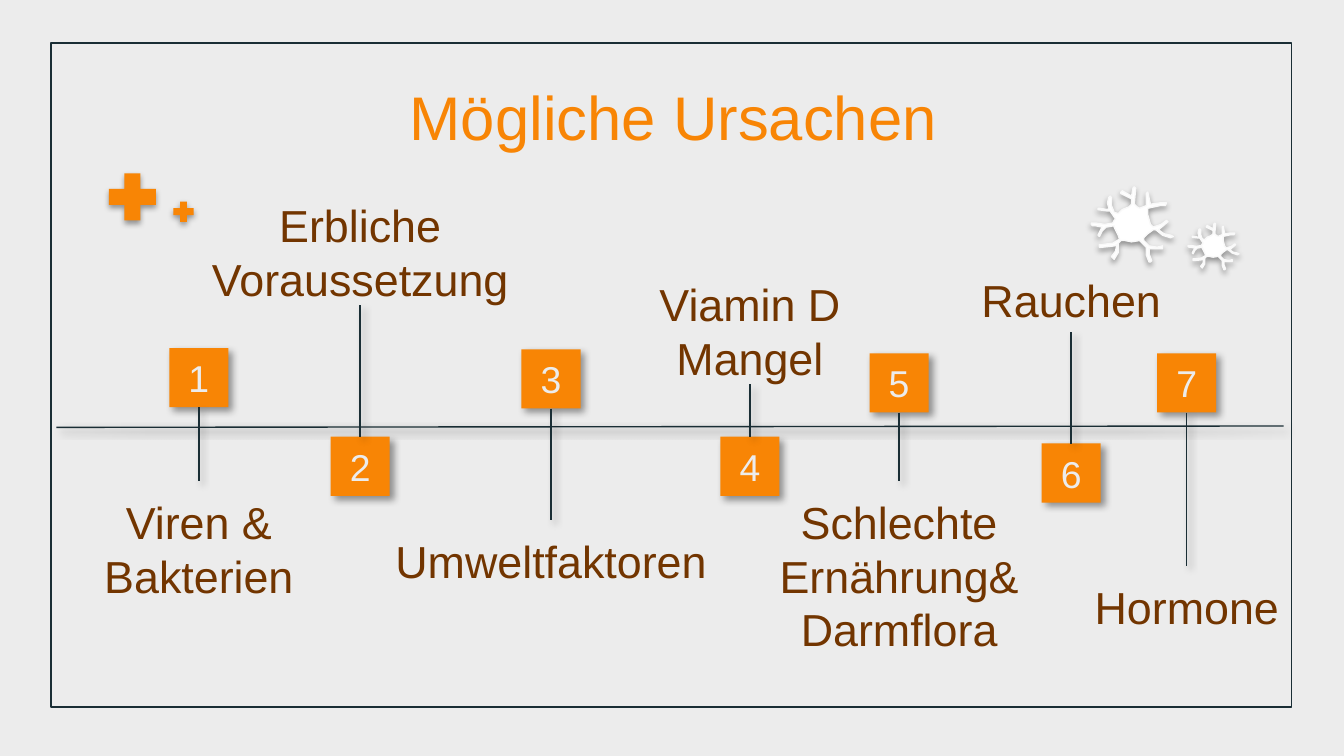
from lxml import etree
from pptx import Presentation
from pptx.dml.color import RGBColor
from pptx.enum.shapes import MSO_CONNECTOR, MSO_SHAPE
from pptx.enum.text import MSO_ANCHOR, MSO_AUTO_SIZE, PP_ALIGN
from pptx.util import Inches, Pt

RECT, CROSS = MSO_SHAPE.RECTANGLE, MSO_SHAPE.CROSS
STRAIGHT = MSO_CONNECTOR.STRAIGHT
TOP, MIDDLE = MSO_ANCHOR.TOP, MSO_ANCHOR.MIDDLE
NO_FIT, CENTER = MSO_AUTO_SIZE.NONE, PP_ALIGN.CENTER

PAPER = RGBColor(0xEC, 0xEC, 0xEC)
ORANGE = RGBColor(0xF8, 0x85, 0x05)
BROWN = RGBColor(0x72, 0x35, 0x00)
DARK = RGBColor(0x1A, 0x2E, 0x35)
WHITE = RGBColor(0xFF, 0xFF, 0xFF)
PALE = RGBColor(0xF9, 0xF9, 0xF9)
FONT = "Arial"
BOX = 0.44

# Shadows: opacity %, blur pt, distance pt, direction in degrees
SOFT = (40, 4, 3, 45)
DROP = (38, 3.1, 1.6, 90)

# Content
TITLE = "Mögliche Ursachen"
# label, centre x, number box top, label top, label width, label height
CAUSES = [
    ("Viren & Bakterien", 1.48, 2.59, 3.58, 2.57, 0.54),
    ("Erbliche Voraussetzung", 2.68, 3.25, 1.37, 2.57, 0.9),
    ("Umweltfaktoren", 4.1, 2.6, 3.87, 2.76, 0.79),
    ("Viamin D Mangel", 5.58, 3.25, 1.96, 2.57, 0.9),
    ("Schlechte Ernährung& Darmflora", 6.69, 2.63, 3.58, 3.23, 0.54),
    ("Rauchen", 7.97, 3.3, 1.93, 1.73, 0.54),
    ("Hormone", 8.83, 2.63, 4.21, 1.73, 0.49),
]
PLUSES = [(0.81, 1.29, 0.35), (1.29, 1.5, 0.15)]  # left, top, size
CELLS = [(8.12, 1.39, 1), (8.84, 1.66, 0.62)]  # left, top, scale
# Outline of a cell with branches, in hundredths of an inch
CELL = [
    (32, 0), (33, 1), (32, 13), (34, 15), (36, 16), (41, 14), (41, 5),
    (42, 4), (44, 13), (51, 12), (56, 12), (55, 14), (51, 14), (42, 16),
    (42, 21), (44, 28), (46, 30), (52, 28), (56, 25), (57, 26), (50, 32),
    (54, 35), (59, 36), (61, 37), (59, 38), (53, 36), (48, 32), (46, 32),
    (42, 35), (39, 38), (39, 40), (43, 44), (49, 45), (53, 44), (53, 46),
    (49, 46), (43, 46), (43, 50), (45, 55), (44, 56), (43, 56), (41, 51),
    (41, 45), (38, 42), (36, 40), (30, 41), (25, 40), (22, 40), (20, 42),
    (20, 49), (17, 54), (15, 52), (18, 48), (19, 43), (17, 44), (8, 45),
    (6, 45), (6, 43), (8, 43), (16, 42), (21, 39), (20, 36), (17, 30),
    (17, 29), (11, 30), (8, 33), (6, 37), (5, 36), (8, 30), (3, 29),
    (1, 29), (0, 28), (0, 27), (3, 27), (10, 28), (16, 27), (17, 25),
    (18, 24), (16, 21), (14, 18), (12, 18), (5, 17), (5, 16), (6, 16),
    (12, 17), (13, 16), (12, 12), (13, 8), (14, 7), (15, 8), (15, 14),
    (17, 19), (20, 20), (23, 17), (28, 15), (30, 13), (30, 9), (22, 5),
    (22, 4), (23, 3), (30, 7), (31, 1),
]


def shade(shape, look):
    """Give a shape or connector an outer shadow."""
    alpha, blur, dist, angle = look
    ns = "{http://schemas.openxmlformats.org/drawingml/2006/main}"
    props = shape._element.spPr
    for old in props.findall(ns + "effectLst"):
        props.remove(old)
    effects = etree.SubElement(props, ns + "effectLst")
    outer = etree.SubElement(
        effects, ns + "outerShdw", blurRad=str(Pt(blur)), dist=str(Pt(dist)),
        dir=str(angle * 60000), algn="bl", rotWithShape="0")
    tone = etree.SubElement(outer, ns + "srgbClr", val="000000")
    etree.SubElement(tone, ns + "alpha", val=str(alpha * 1000))


def write(shape, text, size, color, anchor=TOP):
    frame = shape.text_frame
    frame.text = text
    frame.word_wrap = True
    frame.auto_size = NO_FIT
    frame.vertical_anchor = anchor
    frame.margin_left = frame.margin_right = Inches(0.1)
    frame.margin_top = frame.margin_bottom = Inches(0.1)
    para = frame.paragraphs[0]
    para.alignment = CENTER
    font = para.runs[0].font
    font.name, font.size, font.color.rgb = FONT, Pt(size), color
    return para


def paint(shape, color, look):
    shape.fill.solid()
    shape.fill.fore_color.rgb = color
    shape.line.fill.background()
    shade(shape, look)


def stroke(x1, y1, x2, y2):
    line = shapes.add_connector(
        STRAIGHT, Inches(x1), Inches(y1), Inches(x2), Inches(y2))
    line.line.color.rgb, line.line.width = DARK, Pt(0.75)
    shade(line, SOFT)
    return line


# Slide in 16:9
prs = Presentation()
prs.slide_width = Inches(10)
prs.slide_height = prs.slide_width * 9 // 16
slide = prs.slides.add_slide(prs.slide_layouts[5])
shapes = slide.shapes
slide.background.fill.solid()
slide.background.fill.fore_color.rgb = PAPER

# Frame and title
border = shapes.add_shape(
    RECT, Inches(0.38), Inches(0.32), Inches(9.23), Inches(4.94))
border.fill.background()
border.line.color.rgb, border.line.width = DARK, Pt(0.75)
border.shadow.inherit = False
title = shapes.title
title.left, title.top = Inches(0.79), Inches(0.49)
title.width, title.height = Inches(8.44), Inches(0.63)
write(title, TITLE, 33, ORANGE)

# Timeline with numbered causes
stroke(0.42, 3.18, 9.55, 3.17)
for num, (text, x, top, y, width, height) in enumerate(CAUSES, 1):
    label = shapes.add_textbox(
        Inches(x - width / 2), Inches(y), Inches(width), Inches(height))
    para = write(label, text, 24, BROWN)
    para.space_after = Pt(16)

    box = shapes.add_shape(
        RECT, Inches(x - BOX / 2), Inches(top), Inches(BOX), Inches(BOX))
    paint(box, ORANGE, SOFT)
    write(box, str(num), 20, PAPER, MIDDLE)

    above = y < top
    start, end = (top, y + height) if above else (top + BOX, y)
    stem = stroke(x, start, x, end)
    stem.begin_connect(box, 0 if above else 2)

# Plus signs
for left, top, size in PLUSES:
    plus = shapes.add_shape(
        CROSS, Inches(left), Inches(top), Inches(size), Inches(size))
    plus.adjustments[0] = 0.33
    paint(plus, ORANGE, DROP)

# Cells
for left, top, scale in CELLS:
    path = shapes.build_freeform(*CELL[0], scale=Inches(0.01) * scale)
    path.add_line_segments(CELL[1:], close=True)
    cell = path.convert_to_shape(Inches(left), Inches(top))
    paint(cell, WHITE, DROP)
    cell.line.color.rgb, cell.line.width = PALE, Pt(0.75)

prs.save("out.pptx")
